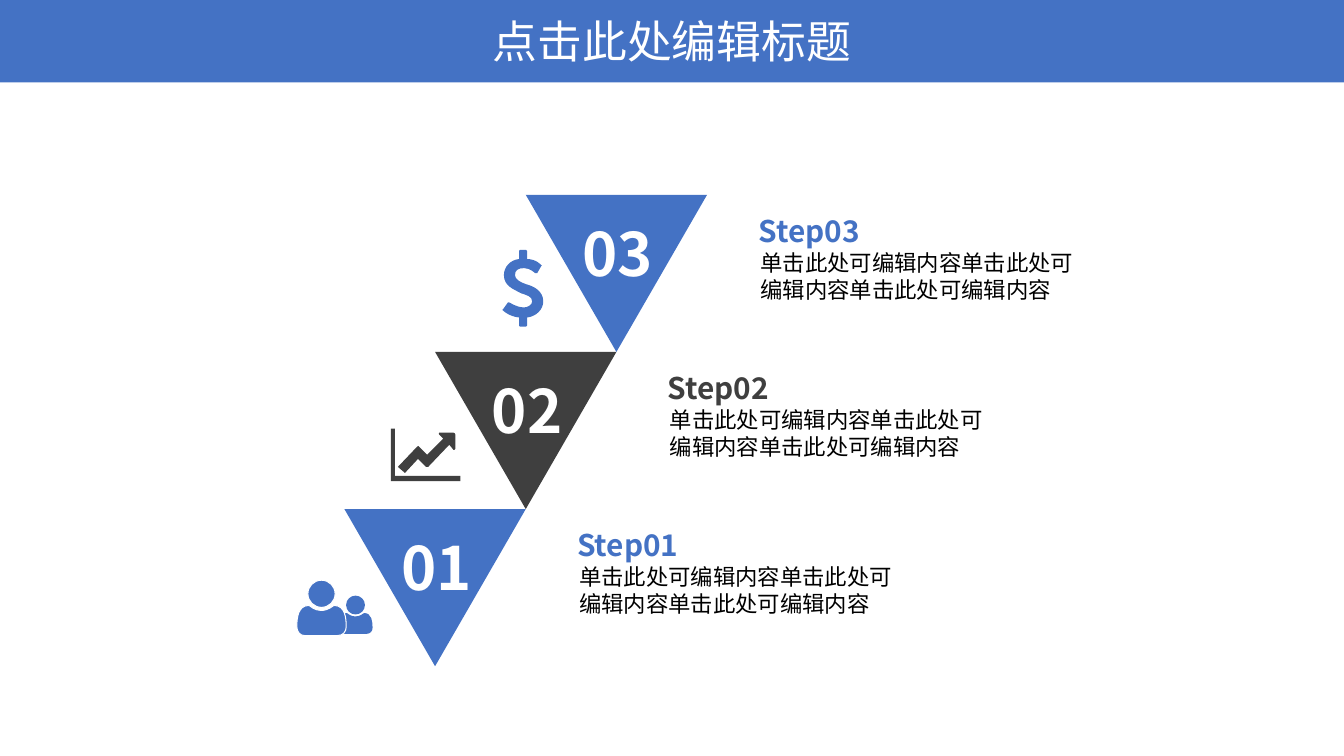
"""Build the three-step triangle staircase slide."""
from dataclasses import dataclass
from typing import Any, NamedTuple, Optional

from lxml.etree import SubElement
from pptx import Presentation
from pptx.dml.color import RGBColor
from pptx.enum.shapes import MSO_SHAPE as Preset
from pptx.enum.text import MSO_ANCHOR as Anchor, MSO_AUTO_SIZE as AutoSize, PP_ALIGN as Align
from pptx.oxml.ns import qn
from pptx.util import Cm, Pt

COLORS = {"blue": "4472C4", "dark": "3F3F3F", "white": "FFFFFF", "black": "000000"}
FONT = "Noto Sans CJK SC"
PAGE_WIDTH, PAGE_HEIGHT, BAR_HEIGHT = 33.87, 19.05, 2.08
FIRST_LEFT, FIRST_TOP = 8.68, 12.83
TRIANGLE_WIDTH, TRIANGLE_HEIGHT = 4.57, 3.96
ICON_UNIT = Cm(2.54) / 100
DETAIL = "单击此处可编辑内容" * 3

Contour = list[tuple[float, ...]]

PERSON: list[Contour] = [
    [(40, 55), (8, 55), (3, 55, 0, 51, 0, 46), (0, 38, 1, 25, 12, 25),
     (13, 25, 17, 30, 24, 30), (32, 30, 36, 25, 37, 25),
     (48, 25, 49, 38, 49, 46), (49, 51, 46, 55, 40, 55)],
    [(24.5, 27), (17, 27, 11, 21, 11, 13.5), (11, 6, 17, 0, 24.5, 0),
     (32, 0, 38, 6, 38, 13.5), (38, 21, 32, 27, 24.5, 27)],
]
GROWTH: list[Contour] = [
    [(69, 52), (0, 52), (0, 0), (4, 0), (4, 47), (69, 47)],
    [(64, 20), (64, 21, 62, 22, 62, 21), (58, 16), (37, 38), (36, 38, 36, 38, 35, 38),
     (27, 30), (14, 44), (7, 38), (26, 18), (27, 17, 28, 17, 28, 18), (36, 26),
     (52, 10), (48, 6), (47, 6, 48, 4, 48, 4), (62, 4), (63, 4, 64, 5, 64, 6)],
]
DOLLAR: list[Contour] = [
    [(25, 67), (25, 75), (25, 75, 25, 76, 24, 76), (18, 76), (17, 76, 17, 75, 17, 75),
     (17, 67), (7, 66, 1, 60, 1, 60), (0, 60, 0, 59, 1, 59), (6, 52), (7, 52),
     (8, 52, 14, 57, 22, 57), (25, 57, 30, 55, 30, 51), (30, 46, 25, 45, 19, 43),
     (12, 39, 2, 36, 2, 25), (2, 17, 8, 10, 17, 9), (17, 1), (17, 0, 17, 0, 18, 0),
     (24, 0), (25, 0, 25, 0, 25, 1), (25, 9), (34, 9, 39, 15, 39, 15),
     (40, 15, 40, 16, 39, 16), (35, 23), (33, 23), (33, 23, 28, 18, 22, 18),
     (16, 18, 13, 20, 13, 25), (13, 29, 18, 32, 24, 34), (32, 36, 41, 41, 41, 51),
     (41, 59, 34, 66, 25, 67)],
]


class Box(NamedTuple):
    left: float
    top: float
    width: float
    height: float


@dataclass(frozen=True)
class Step:
    number: str
    color: str


@dataclass(frozen=True)
class Icon:
    contours: list[Contour]
    left: float
    top: float
    color: str
    scale: float = 1
    outline: Optional[str] = None


STEPS = [Step("01", "blue"), Step("02", "dark"), Step("03", "blue")]
ICONS = [
    Icon(PERSON, 8.53, 15.01, "blue", scale=0.69),
    Icon(PERSON, 7.48, 14.62, "blue", outline="white"),
    Icon(GROWTH, 9.85, 10.8, "dark"),
    Icon(DOLLAR, 12.65, 6.3, "blue"),
]


def rgb(color: str) -> RGBColor:
    return RGBColor.from_string(COLORS[color])


def apply_format(target: Any, values: dict[str, Any]) -> None:
    for name, value in values.items():
        setattr(target, name, value)


def paint(shape: Any, color: str, outline: Optional[str] = None) -> None:
    shape.shadow.inherit = False
    shape.fill.solid()
    shape.fill.fore_color.rgb = rgb(color)
    if outline:
        shape.line.color.rgb = rgb(outline)
        shape.line.width = Pt(0.75)
    else:
        shape.line.fill.background()


def write(shape: Any, text: str, size: float, color: str, bold: bool = False,
          wrap: bool = True, align: Align = Align.LEFT, anchor: Anchor = Anchor.TOP) -> None:
    frame = shape.text_frame
    apply_format(frame, {"word_wrap": wrap, "auto_size": AutoSize.NONE, "vertical_anchor": anchor})
    para = frame.paragraphs[0]
    para.alignment = align
    span = para.add_run()
    span.text = text
    apply_format(span.font, {"name": FONT, "size": Pt(size), "bold": bold})
    span.font.color.rgb = rgb(color)
    SubElement(span.font._element, qn("a:ea")).set("typeface", FONT)


def add_text(page: Any, box: Box, text: str, size: float, color: str, **options: Any) -> None:
    write(page.shapes.add_textbox(*map(Cm, box)), text, size, color, **options)


def add_title(page: Any, text: str) -> None:
    bar = page.shapes.add_shape(Preset.RECTANGLE, 0, 0, Cm(PAGE_WIDTH), Cm(BAR_HEIGHT))
    paint(bar, "blue")
    title = page.shapes.title
    title.element.addprevious(bar.element)
    box = Box(11.84, 0.21, 10.19, 1.63)
    apply_format(title, {name: Cm(value) for name, value in box._asdict().items()})
    write(title, text, 32, "white", align=Align.CENTER, anchor=Anchor.MIDDLE)


def add_step(page: Any, step: Step, left: float, top: float) -> None:
    box = Box(left, top, TRIANGLE_WIDTH, TRIANGLE_HEIGHT)
    triangle = page.shapes.add_shape(Preset.ISOSCELES_TRIANGLE, *map(Cm, box))
    triangle.element.spPr.xfrm.set("flipV", "1")
    paint(triangle, step.color)
    add_text(page, Box(left + 1.18, top + 0.43, 2.39, 2.08), step.number, 42.7, "white",
             bold=True, wrap=False)
    add_text(page, Box(left + 5.67, top + 1.24, 8.51, 1.63), DETAIL, 16, "black")
    add_text(page, Box(left + 5.62, top + 0.32, 3.28, 1.17), f"Step{step.number}", 21.3,
             step.color, bold=True)


def bend(shape: Any, segments: Contour) -> None:
    for line, segment in zip(list(shape.element.iter(qn("a:lnTo"))), segments):
        if len(segment) == 2:
            continue
        line.tag = qn("a:cubicBezTo")
        line.clear()
        for x, y in zip(segment[::2], segment[1::2]):
            point = SubElement(line, qn("a:pt"))
            point.set("x", str(round(x - shape.left)))
            point.set("y", str(round(y - shape.top)))


def add_icon(page: Any, icon: Icon) -> None:
    origin = (Cm(icon.left), Cm(icon.top))
    unit = ICON_UNIT * icon.scale
    contours = [[tuple(origin[i % 2] + value * unit for i, value in enumerate(segment))
                 for segment in contour] for contour in icon.contours]
    builder = page.shapes.build_freeform(*contours[0][0])
    for index, contour in enumerate(contours):
        if index:
            builder.move_to(*contour[0])
        builder.add_line_segments([segment[-2:] for segment in contour[1:]], close=True)
    shape = builder.convert_to_shape()
    bend(shape, [segment for contour in contours for segment in contour[1:]])
    paint(shape, icon.color, icon.outline)


def main() -> None:
    deck = Presentation()
    apply_format(deck, {"slide_width": Cm(PAGE_WIDTH), "slide_height": Cm(PAGE_HEIGHT)})
    page = deck.slides.add_slide(deck.slide_layouts[5])
    add_title(page, "点击此处编辑标题")
    for index, step in enumerate(STEPS):
        add_step(page, step, FIRST_LEFT + index * TRIANGLE_WIDTH / 2,
                 FIRST_TOP - index * TRIANGLE_HEIGHT)
    for icon in ICONS:
        add_icon(page, icon)
    deck.save("out.pptx")


if __name__ == "__main__":
    main()
